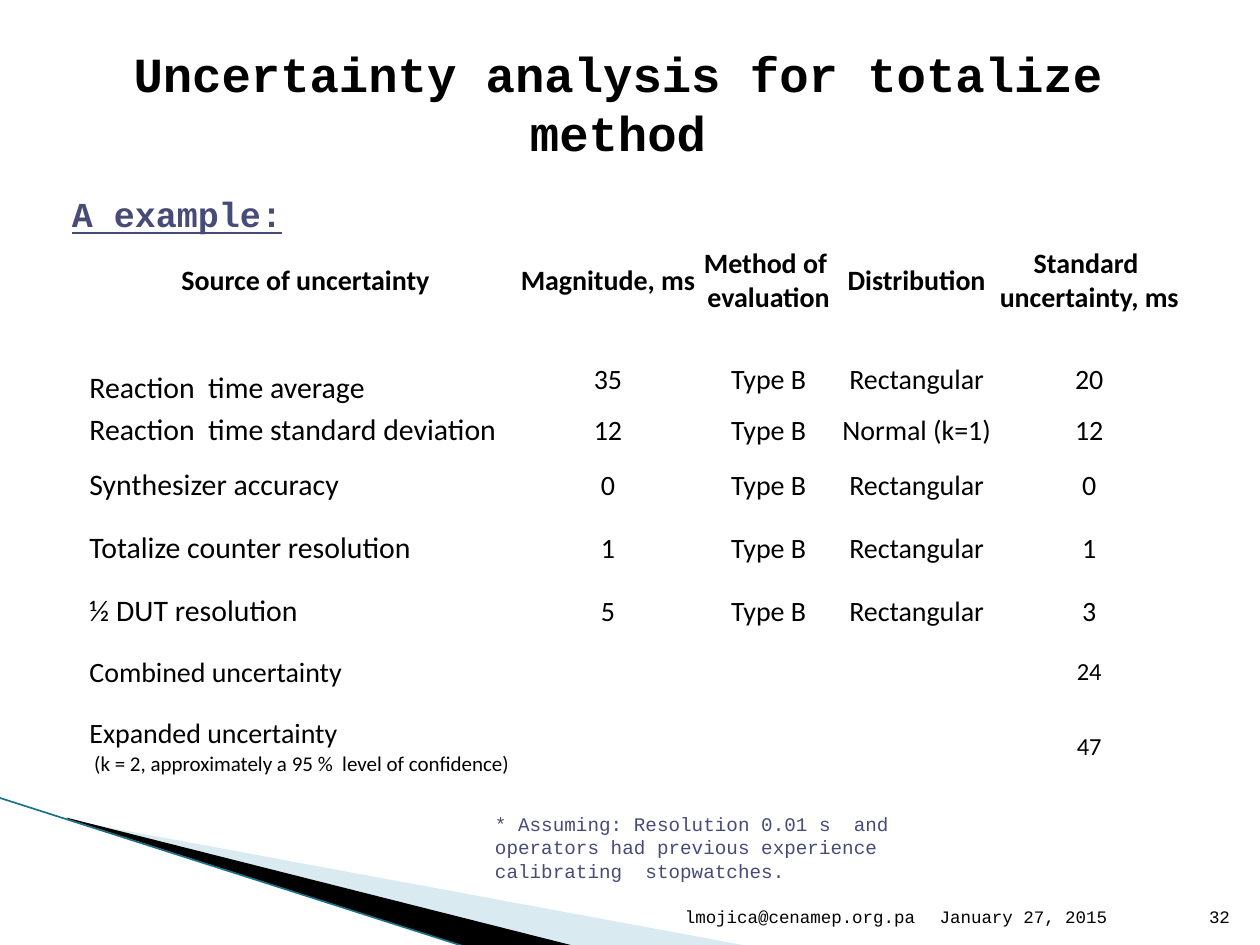
from dataclasses import dataclass

from lxml import etree
from pptx import Presentation
from pptx import util as u
from pptx.dml.color import RGBColor
from pptx.enum import shapes, text
from pptx.oxml import ns

LEFT, CENTER, RIGHT = text.PP_ALIGN.LEFT, text.PP_ALIGN.CENTER, text.PP_ALIGN.RIGHT
TOP, MIDDLE, BOTTOM = (text.MSO_ANCHOR.TOP, text.MSO_ANCHOR.MIDDLE,
                       text.MSO_ANCHOR.BOTTOM)


@dataclass(frozen=True)
class Theme:
    mono: str = "Courier New"
    sans: str = "Calibri"
    ink: str = "000000"
    accent: str = "474B78"
    pale: str = "A0CBDC"
    edge: str = "1B7288"
    title: int = 28
    heading: int = 20
    source: int = 17
    cell: int = 16
    result: int = 14
    remark: int = 12
    note: int = 11
    footer: int = 10


class SlideWriter:
    """Holds the style and the current slide."""

    def __init__(self, slide, theme):
        self.slide = slide
        self.theme = theme

    def place(self, shape, left, top, width, height):
        shape.left, shape.top = u.Inches(left), u.Inches(top)
        shape.width, shape.height = u.Inches(width), u.Inches(height)

    def run(self, paragraph, words, size, font, color, bold=False, underline=False):
        run = paragraph.add_run()
        run.text = words
        run.font.size, run.font.name = u.Pt(size), font
        run.font.bold, run.font.underline = bold, underline
        run.font.color.rgb = RGBColor.from_string(color)

    def title(self, words, box):
        title = self.slide.shapes.title
        self.place(title, *box)
        title.text_frame.vertical_anchor = MIDDLE
        paragraph = title.text_frame.paragraphs[0]
        paragraph.alignment = CENTER
        self.run(paragraph, words, self.theme.title, self.theme.mono,
                 self.theme.ink, bold=True)

    def heading(self, words, box):
        body = self.slide.placeholders[1]
        self.place(body, *box)
        paragraph = body.text_frame.paragraphs[0]
        paragraph.space_before = u.Pt(0)
        props = paragraph._p.get_or_add_pPr()
        props.set("marL", str(u.Inches(0.72)))
        props.set("indent", str(u.Inches(-0.56)))
        etree.SubElement(props, ns.qn("a:buNone"))
        self.run(paragraph, words, self.theme.heading, self.theme.mono,
                 self.theme.accent, bold=True, underline=True)

    def label(self, words, box, size, color, align=LEFT, anchor=TOP):
        frame = self.slide.shapes.add_textbox(*map(u.Inches, box)).text_frame
        frame.word_wrap = True
        frame.vertical_anchor = anchor
        frame.paragraphs[0].alignment = align
        self.run(frame.paragraphs[0], words, size, self.theme.mono, color)

    def wedge(self, points, frame, color, opacity=100):
        """Draw an outline through slide points, held in its own frame."""
        start, *rest = [(u.Inches(x), u.Inches(y)) for x, y in points]
        builder = self.slide.shapes.build_freeform(*start)
        builder.add_line_segments(rest, close=True)
        wedge = builder.convert_to_shape()
        drawn_left, drawn_top = wedge.left, wedge.top
        self.place(wedge, *frame)
        outline = wedge._element.spPr.find(".//" + ns.qn("a:path"))
        outline.set("w", str(wedge.width))
        outline.set("h", str(wedge.height))
        for point in outline.iter(ns.qn("a:pt")):
            point.set("x", str(int(point.get("x")) + drawn_left - wedge.left))
            point.set("y", str(int(point.get("y")) + drawn_top - wedge.top))
        wedge.shadow.inherit = False
        wedge.line.fill.background()
        wedge.fill.solid()
        wedge.fill.fore_color.rgb = RGBColor.from_string(color)
        if opacity < 100:
            tint = wedge._element.spPr.find(".//" + ns.qn("a:srgbClr"))
            etree.SubElement(tint, ns.qn("a:alpha")).set("val", str(opacity * 1000))

    def line(self, start, end, color, width):
        line = self.slide.shapes.add_connector(
            shapes.MSO_CONNECTOR.STRAIGHT, *map(u.Inches, start + end))
        line.line.color.rgb = RGBColor.from_string(color)
        line.line.width = u.Pt(width)
        etree.SubElement(line._element.spPr, ns.qn("a:effectLst"))

    def cell(self, cell, lines, align, bold=False, spacing=None):
        """Fill a cell with (words, size) lines."""
        cell.fill.background()
        cell.vertical_anchor = MIDDLE
        cell.margin_left = cell.margin_right = cell.margin_top = u.Inches(0.01)
        cell.margin_bottom = 0
        frame = cell.text_frame
        if not lines:
            end = frame.paragraphs[0]._p.get_or_add_endParaRPr()
            end.set("sz", str(self.theme.cell * 100))
        for index, (words, size) in enumerate(lines):
            paragraph = frame.add_paragraph() if index else frame.paragraphs[0]
            paragraph.alignment = align
            if spacing:
                paragraph.line_spacing = spacing
            self.run(paragraph, words, size, self.theme.sans, self.theme.ink, bold)

    def table(self, box, widths, heights, rows):
        table = self.slide.shapes.add_table(
            len(heights), len(widths), *map(u.Inches, box)).table
        table.first_row = table.horz_banding = False
        for column, width in zip(table.columns, widths):
            column.width = u.Inches(width)
        for row, height in zip(table.rows, heights):
            row.height = u.Inches(height)
        for r, row in enumerate(rows):
            for c, lines in enumerate(row):
                self.cell(table.cell(r, c), lines,
                          align=LEFT if r and c == 0 else CENTER,
                          bold=r == 0,
                          spacing=1.5 if (r, c) == (2, 0) else None)


def budget_rows(theme):
    """Rows of the uncertainty budget, each cell a list of (words, size)."""
    headers = [[" Source of uncertainty"], ["Magnitude, ms"],
               ["Method of ", "evaluation"], ["Distribution"],
               ["Standard ", "uncertainty, ms"]]
    sources = [
        ("Reaction  time average", "35", "Rectangular", "20"),
        ("Reaction  time standard deviation", "12", "Normal (k=1)", "12"),
        ("Synthesizer accuracy", "0", "Rectangular", "0"),
        ("Totalize counter resolution", "1", "Rectangular", "1"),
        ("½ DUT resolution", "5", "Rectangular", "3"),
    ]
    totals = [
        ([("Combined uncertainty", theme.cell)], "24"),
        ([("Expanded uncertainty", theme.cell),
          (" (k = 2, approximately a 95 %  level of confidence)", theme.remark)], "47"),
    ]
    rows = [[[(words, theme.cell) for words in lines] for lines in headers], [[]] * 5]
    for source, magnitude, distribution, standard in sources:
        values = (magnitude, "Type B", distribution, standard)
        rows.append([[(source, theme.source)]]
                    + [[(value, theme.cell)] for value in values])
    for name, value in totals:
        rows.append([name, [], [], [], [(value, theme.result)]])
    return rows


def main():
    deck = Presentation()
    deck.slide_width, deck.slide_height = u.Inches(10), u.Inches(7.5)
    theme = Theme()
    writer = SlideWriter(deck.slides.add_slide(deck.slide_layouts[1]), theme)

    # Corner decoration
    writer.wedge([(0.55, 6.51), (5.95, 7.51), (4.56, 7.51), (0.55, 6.5)],
                 (0.78, 5.47, 4.16, 1.58), theme.pale, opacity=40)
    writer.wedge([(0.53, 6.49), (4.57, 7.51), (3.72, 7.52), (0.54, 6.5)],
                 (-0.06, 6.33, 4.16, 0.92), theme.ink)
    writer.line((-0.01, 6.33), (3.71, 7.52), theme.edge, 0.95)

    # Title and heading
    writer.title("Uncertainty analysis for totalize method", (0.31, 0.23, 9.19, 1.17))
    writer.heading("A example:", (0.31, 1.48, 3.05, 0.47))

    # Uncertainty budget
    writer.table((0.7, 1.95, 8.69, 4.31), [3.4, 1.45, 1.1, 1.25, 1.49],
                 [0.47, 0.24, 0.37, 0.37, 0.5, 0.5, 0.5, 0.47, 0.71],
                 budget_rows(theme))

    # Note and footer
    writer.label("* Assuming: Resolution 0.01 s  and operators had previous "
                 "experience calibrating  stopwatches.",
                 (3.83, 6.4, 3.98, 0.47), theme.note, theme.accent)
    for words, left, width, align in (("January 27, 2015", 7.36, 2.1, LEFT),
                                      ("32", 9.46, 0.4, RIGHT),
                                      ("lmojica@cenamep.org.pa", 4.79, 2.57, RIGHT)):
        writer.label(words, (left, 7.01, width, 0.4), theme.footer, theme.ink,
                     align, BOTTOM)

    deck.save("out.pptx")


if __name__ == "__main__":
    main()
